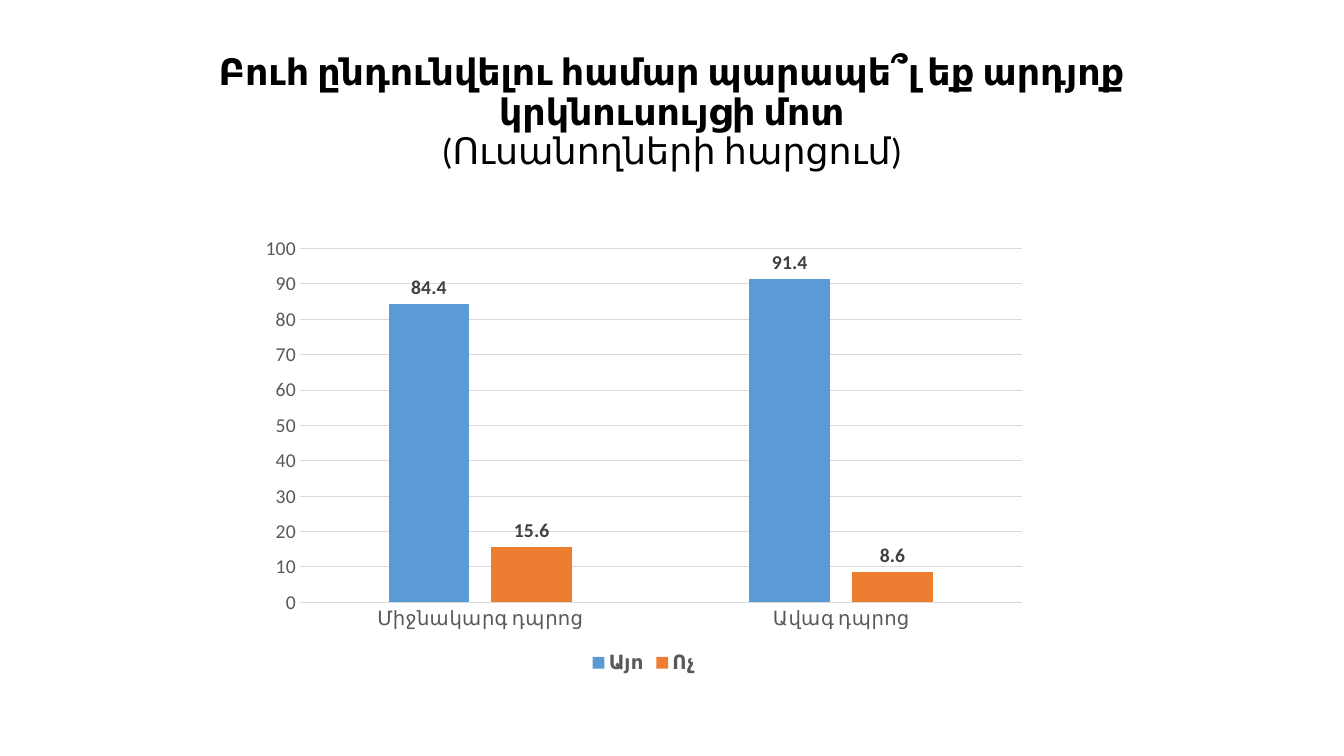
from pptx import Presentation
from pptx.chart.data import CategoryChartData
from pptx.dml.color import RGBColor
from pptx.enum.chart import (
    XL_CHART_TYPE as ChartType,
    XL_LABEL_POSITION as LabelPosition,
    XL_LEGEND_POSITION as LegendPosition,
    XL_TICK_MARK as TickMark,
)
from pptx.enum.text import MSO_ANCHOR as Anchor, PP_ALIGN as Align
from pptx.util import Pt

FONT = "Calibri"
COLORS = {
    "title": "000000",
    "axis": "595959",
    "label": "404040",
    "grid": "D9D9D9",
    "yes": "5B9BD5",
    "no": "ED7D31",
}
SCHOOLS = ["Միջնակարգ դպրոց", "Ավագ դպրոց"]
ANSWERS = [
    ("Այո", [84.4, 91.4], "yes"),
    ("Ոչ", [15.6, 8.6], "no"),
]


def color(name):
    return RGBColor.from_string(COLORS[name])


def set_font(font, size, color_name, bold=False):
    font.name = FONT
    font.size = Pt(size)
    font.bold = bold
    font.color.rgb = color(color_name)


def set_line(line, color_name):
    line.color.rgb = color(color_name)
    line.width = Pt(0.75)


def add_title(slide, left, top, width, height):
    shape = slide.shapes.add_textbox(Pt(left), Pt(top), Pt(width), Pt(height))
    frame = shape.text_frame
    frame.word_wrap = True
    frame.vertical_anchor = Anchor.MIDDLE
    paragraph = frame.paragraphs[0]
    paragraph.alignment = Align.CENTER
    paragraph.line_spacing = 0.9

    question = paragraph.add_run()
    question.text = "Բուհ ընդունվելու համար պարապե՞լ եք արդյոք կրկնուսույցի մոտ"
    set_font(question.font, 26, "title", bold=True)
    paragraph.add_line_break()
    survey = paragraph.add_run()
    survey.text = "(Ուսանողների հարցում)"
    set_font(survey.font, 26, "title")


def add_answers_chart(slide, left, top, width, height):
    data = CategoryChartData()
    data.categories = SCHOOLS
    for name, values, _ in ANSWERS:
        data.add_series(name, values)
    chart = slide.shapes.add_chart(
        ChartType.COLUMN_CLUSTERED, Pt(left), Pt(top), Pt(width), Pt(height), data
    ).chart
    chart.has_title = False
    set_font(chart.font, 10, "title")

    # Axes and gridlines
    for axis in (chart.category_axis, chart.value_axis):
        axis.major_tick_mark = axis.minor_tick_mark = TickMark.NONE
        set_font(axis.tick_labels.font, 14, "axis")
    set_line(chart.category_axis.format.line, "grid")
    value_axis = chart.value_axis
    value_axis.minimum_scale, value_axis.maximum_scale = 0, 100
    value_axis.major_unit = 10
    value_axis.format.line.fill.background()
    set_line(value_axis.major_gridlines.format.line, "grid")

    # Columns and value labels
    plot = chart.plots[0]
    plot.gap_width = 219
    plot.overlap = -27
    plot.vary_by_categories = False
    for series, (_, _, color_name) in zip(plot.series, ANSWERS):
        series.format.fill.solid()
        series.format.fill.fore_color.rgb = color(color_name)
        labels = series.data_labels
        labels.show_value = True
        labels.position = LabelPosition.OUTSIDE_END
        set_font(labels.font, 14, "label", bold=True)

    # Legend
    chart.has_legend = True
    chart.legend.position = LegendPosition.BOTTOM
    chart.legend.include_in_layout = False
    set_font(chart.legend.font, 14, "axis", bold=True)


def main():
    presentation = Presentation()
    presentation.slide_width = Pt(960)
    presentation.slide_height = Pt(540)
    slide = presentation.slides.add_slide(presentation.slide_layouts[6])
    add_title(slide, 66, 28.75, 828, 104.4)
    add_answers_chart(slide, 178.5, 162.5, 562.5, 322.5)
    presentation.save("out.pptx")


if __name__ == "__main__":
    main()
